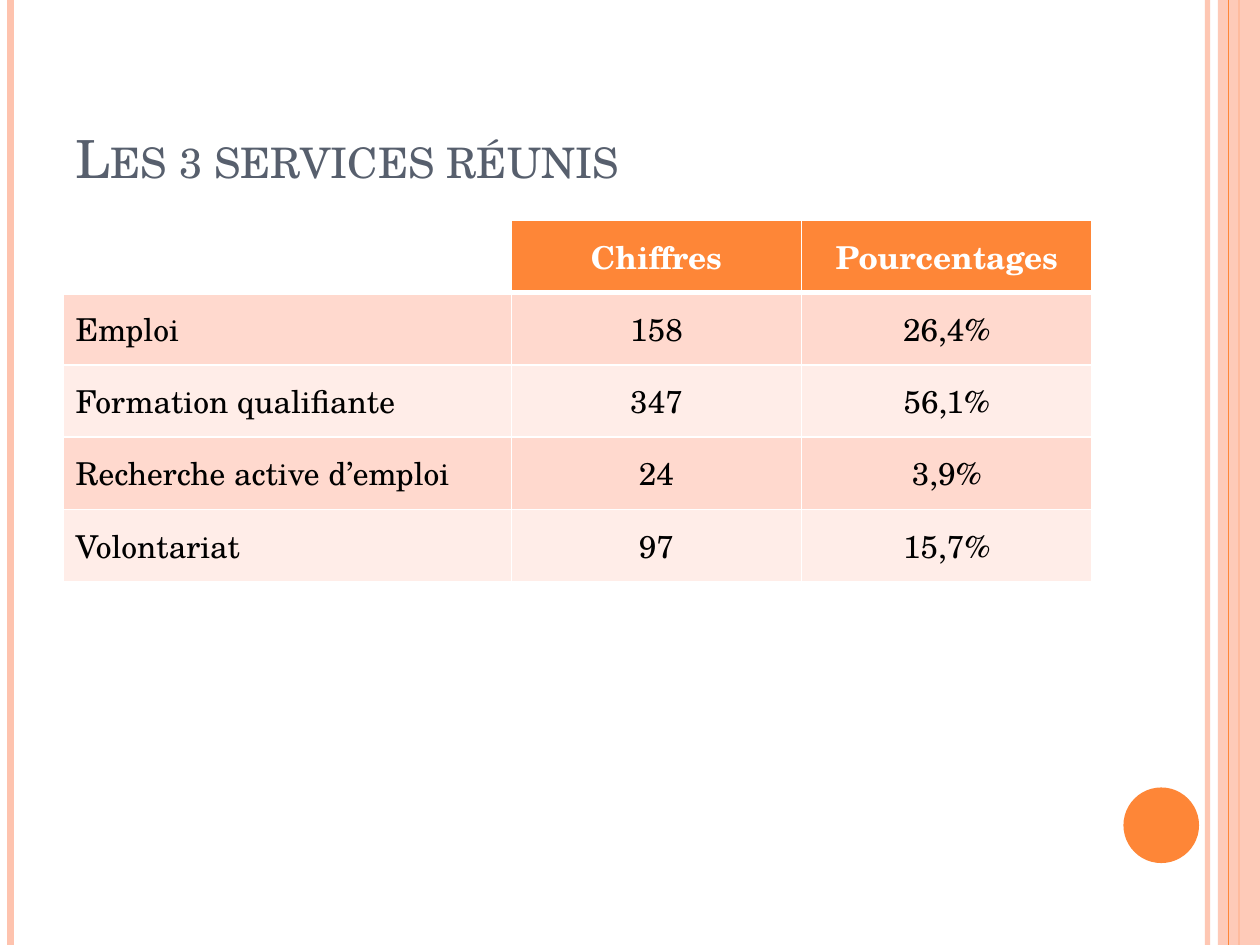
import pptx
import pptx.dml.color
import pptx.enum.dml
import pptx.enum.shapes
import pptx.enum.text
import pptx.oxml
import pptx.oxml.ns
import pptx.util

RGB = pptx.dml.color.RGBColor
ORANGE = RGB(0xFE, 0x86, 0x37)
PEACH = RGB(0xFE, 0xC3, 0xAE)
SLATE = RGB(0x57, 0x5F, 0x6D)
BAND = RGB(0xFF, 0xD9, 0xCE)
PALE = RGB(0xFF, 0xED, 0xE8)
WHITE = RGB(0xFF, 0xFF, 0xFF)
BLACK = RGB(0, 0, 0)
FACE = "TeX Gyre Schola"
COLS, ROWS = 120, 90

ALIGN = pptx.enum.text.PP_ALIGN
ANCHOR = pptx.enum.text.MSO_ANCHOR
SHAPE = pptx.enum.shapes.MSO_SHAPE

DATA = [
    ("", "Chiffres", "Pourcentages"),
    ("Emploi", "158", "26,4%"),
    ("Formation qualifiante", "347", "56,1%"),
    ("Recherche active d’emploi", "24", "3,9%"),
    ("Volontariat", "97", "15,7%"),
]


def add_xml(parent, tag, **attrs):
    node = pptx.oxml.parse_xml(f"<{tag} {pptx.oxml.ns.nsdecls('a')}/>")
    for name, value in attrs.items():
        node.set(name, str(value))
    parent.append(node)
    return node


def fade(part, share):
    color = part.find(".//" + pptx.oxml.ns.qn("a:srgbClr"))
    add_xml(color, "a:alpha", val=share * 1000)


class Page:
    def __init__(self, deck):
        self.wide, self.high = deck.slide_width, deck.slide_height
        self.slide = deck.slides.add_slide(deck.slide_layouts[5])

    def x(self, cols):
        return round(self.wide * cols / COLS)

    def y(self, rows):
        return round(self.high * rows / ROWS)

    def box(self, left, top, cols, rows):
        return self.x(left), self.y(top), self.x(cols), self.y(rows)

    def style(self, para, size, color, bold=False, align=ALIGN.LEFT):
        para.alignment = align
        font = para.font
        font.name, font.size, font.bold = FACE, pptx.util.Pt(size), bold
        font.color.rgb = color

    def title(self, text, *area):
        shape = self.slide.shapes.title
        shape.left, shape.top, shape.width, shape.height = self.box(*area)
        frame = shape.text_frame
        frame.text = text
        frame.auto_size = pptx.enum.text.MSO_AUTO_SIZE.NONE
        frame.vertical_anchor = ANCHOR.BOTTOM
        para = frame.paragraphs[0]
        self.style(para, 30, SLATE)
        para.runs[0]._r.get_or_add_rPr().set("cap", "small")

    def rule(self, col, color, width, share=100):
        line = self.slide.shapes.add_connector(
            pptx.enum.shapes.MSO_CONNECTOR.STRAIGHT,
            self.x(col), 0, self.x(col), self.high)
        line.line.color.rgb = color
        line.line.width = pptx.util.Pt(width)
        if share < 100:
            fade(line._element.spPr, share)
        add_xml(line._element.spPr, "a:effectLst")

    def shape(self, kind, color, *area, share=100):
        shape = self.slide.shapes.add_shape(kind, *self.box(*area))
        shape.fill.solid()
        shape.fill.fore_color.rgb = color
        shape.line.fill.background()
        shape.shadow.inherit = False
        if share < 100:
            fade(shape._element.spPr, share)

    def edges(self, cell, base):
        props = cell._tc.get_or_add_tcPr()
        sides = {"L": 1, "R": 1, "T": 1, "B": base}
        for spot, (side, width) in enumerate(sides.items()):
            edge = add_xml(props, f"a:ln{side}", w=pptx.util.Pt(width))
            fill = add_xml(edge, "a:solidFill")
            add_xml(fill, "a:srgbClr", val=WHITE)
            props.insert(spot, edge)

    def table(self, data, spans, *area):
        frame = self.slide.shapes.add_table(
            len(data), len(spans), *self.box(*area))
        table = frame.table
        for col, span in zip(table.columns, spans):
            col.width = self.x(span)
        for r, row in enumerate(data):
            head = r == 0
            back = ORANGE if head else (PALE, BAND)[r % 2]
            for c, text in enumerate(row):
                cell = table.cell(r, c)
                cell.text = text
                cell.vertical_anchor = ANCHOR.MIDDLE
                if text:
                    cell.fill.solid()
                    cell.fill.fore_color.rgb = back
                else:
                    cell.fill.background()
                self.edges(cell, 3 if head else 1)
                self.style(cell.text_frame.paragraphs[0], 18,
                           WHITE if head else BLACK, head,
                           ALIGN.CENTER if c else ALIGN.LEFT)


def main():
    deck = pptx.Presentation()
    deck.slide_width = pptx.util.Inches(10)
    deck.slide_height = pptx.util.Inches(7.5)
    page = Page(deck)
    page.rule(115, PEACH, 3, share=93)
    page.rule(1, PEACH, 4.5)
    page.rule(118, ORANGE, 1.5)
    page.shape(SHAPE.RECTANGLE, PEACH, 116, 0, 4, ROWS, share=87)
    page.rule(117, ORANGE, 0.75)
    page.shape(SHAPE.OVAL, ORANGE, 107, 75, 7.2, 7.2)
    page.title("Les 3 services réunis", 6, 3.6, 98, 15)
    page.table(DATA, (42.7, 27.65, 27.65), 6, 21, 98, 34.4)
    deck.save("out.pptx")


if __name__ == "__main__":
    main()
